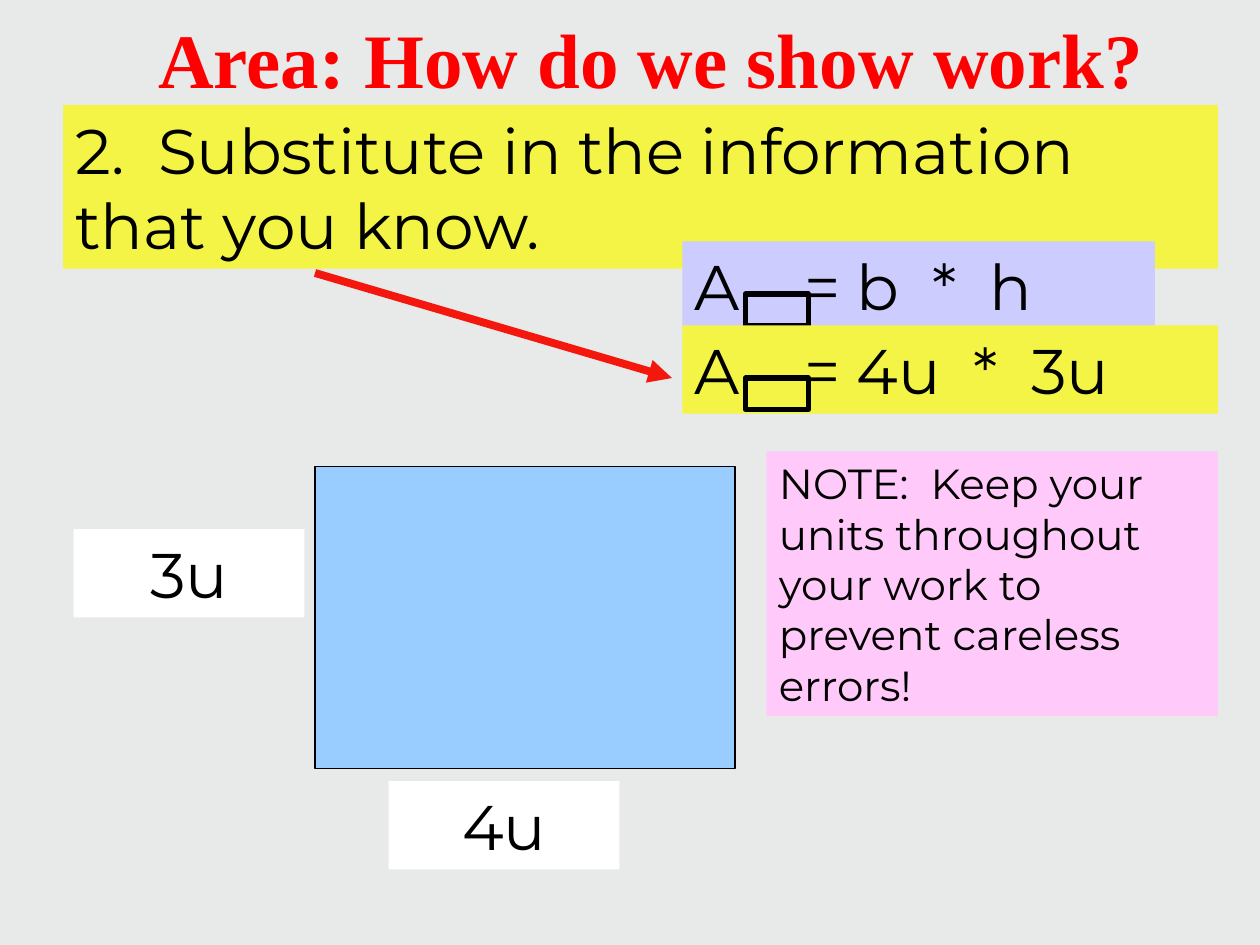
import pptx
import pptx.dml.color
import pptx.enum.shapes
import pptx.enum.text
import pptx.oxml
import pptx.oxml.ns
import pptx.util

RGBColor = pptx.dml.color.RGBColor
Pt = pptx.util.Pt
ALIGN = pptx.enum.text.PP_ALIGN
SIZING = pptx.enum.text.MSO_AUTO_SIZE
ANCHOR = pptx.enum.text.MSO_ANCHOR

BACKGROUND = RGBColor(0xE8, 0xEA, 0xE9)
BLACK = RGBColor(0x00, 0x00, 0x00)
WHITE = RGBColor(0xFF, 0xFF, 0xFF)
RED = RGBColor(0xFF, 0x00, 0x00)
ARROW_RED = RGBColor(0xF4, 0x17, 0x0E)
YELLOW = RGBColor(0xF4, 0xF4, 0x46)
LAVENDER = RGBColor(0xCC, 0xCC, 0xFF)
SKY = RGBColor(0x99, 0xCC, 0xFF)
PINK = RGBColor(0xFF, 0xC9, 0xFA)

EMU_PER_PX = 7620


def px(length):
    return pptx.util.Emu(length * EMU_PER_PX)


def place(part, box):
    part.left, part.top, part.width, part.height = map(px, box)


def write(frame, text, *, size=36, font="Montserrat", color=BLACK, bold=False,
          align=ALIGN.LEFT, tab=None):
    frame.word_wrap = True
    paragraph = frame.paragraphs[0]
    paragraph.alignment = align
    if tab:
        properties = paragraph._p.get_or_add_pPr()
        stops = pptx.oxml.parse_xml(
            f'<a:tabLst {pptx.oxml.ns.nsdecls("a")}><a:tab pos="{px(tab)}" algn="l"/></a:tabLst>')
        properties.append(stops)
    run = paragraph.add_run()
    run.text = text
    run.font.size = Pt(size)
    run.font.name = font
    run.font.bold = bold
    run.font.color.rgb = color


def add_panel(slide, box, text, fill, **text_format):
    panel = slide.shapes.add_textbox(*map(px, box))
    panel.fill.solid()
    panel.fill.fore_color.rgb = fill
    write(panel.text_frame, text, **text_format)
    panel.text_frame.auto_size = SIZING.SHAPE_TO_FIT_TEXT


def add_rectangle(slide, box, fill, line_width):
    rectangle = slide.shapes.add_shape(
        pptx.enum.shapes.MSO_SHAPE.RECTANGLE, *map(px, box))
    rectangle.shadow.inherit = False
    rectangle.fill.solid()
    rectangle.fill.fore_color.rgb = fill
    rectangle.line.color.rgb = BLACK
    rectangle.line.width = Pt(line_width)


def add_title(slide, box):
    title = slide.shapes.title
    place(title, box)
    frame = title.text_frame
    frame.auto_size = SIZING.NONE
    frame.vertical_anchor = ANCHOR.MIDDLE
    write(frame, "Area: How do we show work?", size=44, font="Times New Roman",
          color=RED, bold=True, align=ALIGN.CENTER)


def add_dimensioned_rectangle(slide, box):
    left, top, width, height = box
    add_rectangle(slide, box, SKY, 0.75)
    label_width, label_height = 220, 84
    for label, x, y in (("3u", left - 230, top + 60),
                        ("4u", left + 70, top + height + 12)):
        add_panel(slide, (x, y, label_width, label_height), label, WHITE,
                  align=ALIGN.CENTER)


def add_formula(slide, box, expression, fill):
    left, top, width, height = box
    add_panel(slide, box, f"A\t= {expression}", fill, tab=104)
    add_rectangle(slide, (left + 60, top + 50, 60, 30), fill, 3)


def add_arrow(slide, start, end):
    arrow = slide.shapes.add_connector(
        pptx.enum.shapes.MSO_CONNECTOR.STRAIGHT, *map(px, start + end))
    arrow.line.color.rgb = ARROW_RED
    arrow.line.width = Pt(4.5)
    namespace = pptx.oxml.ns.nsdecls("a")
    arrow.line._get_or_add_ln().append(
        pptx.oxml.parse_xml(f'<a:tailEnd {namespace} type="triangle"/>'))
    arrow._element.spPr.append(pptx.oxml.parse_xml(f"<a:effectLst {namespace}/>"))


def main():
    deck = pptx.Presentation()
    deck.slide_width, deck.slide_height = px(1200), px(900)
    slide = deck.slides.add_slide(deck.slide_layouts.get_by_name("Title Only"))
    slide.background.fill.solid()
    slide.background.fill.fore_color.rgb = BACKGROUND

    add_title(slide, (40, -20, 1160, 150))
    add_dimensioned_rectangle(slide, (300, 444, 400, 288))
    add_panel(slide, (60, 100, 1100, 156),
              "2.  Substitute in the information that you know.", YELLOW)
    add_formula(slide, (650, 230, 450, 84), "b  *  h", LAVENDER)
    add_formula(slide, (650, 310, 510, 84), "4u  *  3u", YELLOW)
    add_arrow(slide, (300, 260), (640, 360))
    add_panel(slide, (730, 430, 430, 252),
              "NOTE:  Keep your units throughout your work to prevent careless errors!",
              PINK, size=24)
    deck.save("out.pptx")


if __name__ == "__main__":
    main()
